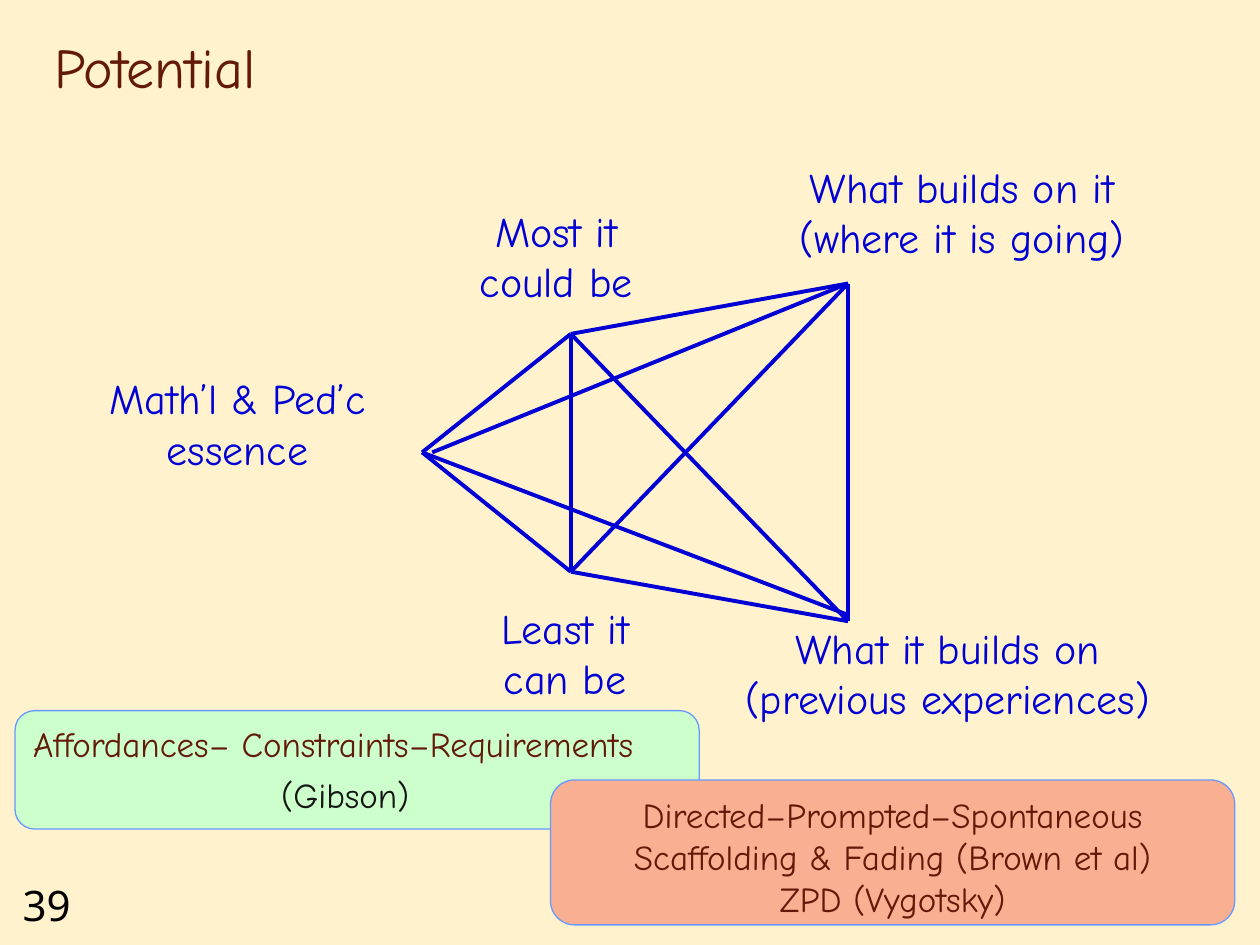
"""Build the 'Potential' slide: a network of five labelled points with two theory panels."""
from lxml import etree
from pptx import Presentation
from pptx import util as u
from pptx.dml.color import RGBColor
from pptx.enum import shapes, text
from pptx.oxml.ns import qn

COLORS = {"paper": "FFF2CC", "blue": "0000D4", "brown": "631908", "black": "000000",
          "ink": "161616", "mint": "CCFFCC", "salmon": "F9B092", "edge": "6699FF"}
HAND, SANS = "Comic Neue", "Noto Sans"
LEFT, CENTER = text.PP_ALIGN.LEFT, text.PP_ALIGN.CENTER
TOP, BOTTOM = text.MSO_ANCHOR.TOP, text.MSO_ANCHOR.BOTTOM

POINTS = {
    "most": (326.2, 190.8),
    "least": (326.2, 326.7),
    "essence": (241.2, 258.5),
    "essence_inner": (247, 258.5),
    "future": (484.6, 162),
    "past": (484.6, 355),
    "past_inner": (484.6, 351.4),
}
LINKS = [
    ("most", "least"), ("most", "essence"), ("future", "most"),
    ("least", "essence"), ("past", "least"), ("future", "past"),
    ("future", "essence_inner"), ("past_inner", "essence"),
    ("future", "least"), ("past", "most"),
]
LABELS = [
    ("Most it\vcould be", (247, 113.8, 141.8, 65.5)),
    ("What builds on it\v(where it is going)", (433.4, 88.6, 232.6, 65.5)),
    ("Math’l & Ped’c\vessence", (19.4, 209.5, 232.6, 65.5)),
    ("Least it\vcan be", (257.8, 340.6, 130.3, 65.5)),
    ("What it builds on\n(previous experiences)", (411.1, 352.1, 260.6, 65.5)),
]
PANELS = [
    ("Affordances– Constraints–Requirements", (8.6, 406.1, 391, 67.7), "mint", LEFT),
    ("Directed–Prompted–Spontaneous\nScaffolding & Fading (Brown et al)\nZPD (Vygotsky)",
     (314.6, 445.7, 391, 82.8), "salmon", CENTER),
]


def rgb(name):
    return RGBColor.from_string(COLORS[name])


def points(values):
    return [u.Pt(value) for value in values]


def write(box, words, size, color, align=LEFT, font=HAND, anchor=TOP):
    frame = box.text_frame
    frame.word_wrap = True
    frame.vertical_anchor = anchor
    frame.text = words
    for para in frame.paragraphs:
        para.alignment = align
        for span in para.runs:
            span.font.name = font
            span.font.size = u.Pt(size)
            span.font.color.rgb = rgb(color)


def add_text(page, words, place, size, color, **style):
    box = page.shapes.add_textbox(*points(place))
    write(box, words, size, color, **style)
    return box


def add_link(page, start, end):
    line = page.shapes.add_connector(
        shapes.MSO_CONNECTOR.STRAIGHT, *points(POINTS[start] + POINTS[end]))
    line.line.color.rgb = rgb("blue")
    line.line.width = u.Pt(2.25)
    etree.SubElement(line._element.spPr, qn("a:effectLst"))


def add_panel(page, words, place, fill, align):
    panel = page.shapes.add_shape(shapes.MSO_SHAPE.ROUNDED_RECTANGLE, *points(place))
    panel.shadow.inherit = False
    panel.fill.solid()
    panel.fill.fore_color.rgb = rgb(fill)
    panel.line.color.rgb = rgb("edge")
    panel.line.width = u.Pt(0.75)
    write(panel, words, 20, "brown", align=align)


def main():
    deck = Presentation()
    deck.slide_width, deck.slide_height = points((720, 540))
    page = deck.slides.add_slide(deck.slide_layouts[6])
    page.background.fill.solid()
    page.background.fill.fore_color.rgb = rgb("paper")

    add_text(page, "39", (5.8, 499, 54, 36), 24, "black", font=SANS)
    add_text(page, "Potential", (23.8, 12.2, 612, 48.2), 32, "brown", anchor=BOTTOM)
    for start, end in LINKS:
        add_link(page, start, end)
    for words, place in LABELS:
        add_text(page, words, place, 24, "blue", align=CENTER)
    for panel in PANELS:
        add_panel(page, *panel)
    source = add_text(page, "(Gibson)", (144.7, 428.4, 124.6, 41), 20, "ink", anchor=BOTTOM)
    source.text_frame.margin_left = u.Pt(16)
    deck.save("out.pptx")


if __name__ == "__main__":
    main()
